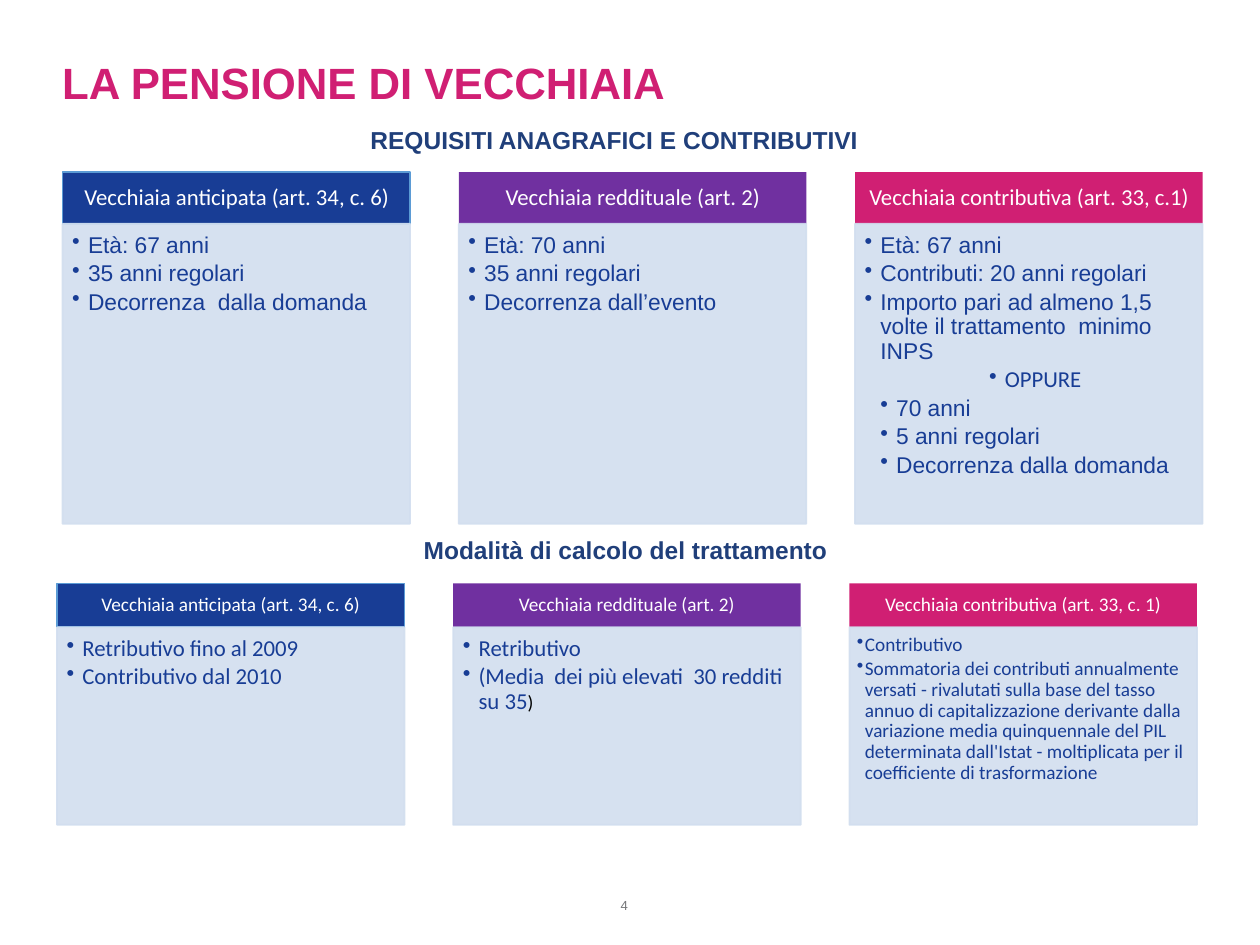
from lxml import etree
from pptx import Presentation
from pptx.dml.color import RGBColor
from pptx.enum.shapes import MSO_SHAPE
from pptx.enum.text import MSO_ANCHOR, PP_ALIGN
from pptx.oxml.ns import qn
from pptx.util import Pt

RECTANGLE = MSO_SHAPE.RECTANGLE
TOP, MIDDLE = MSO_ANCHOR.TOP, MSO_ANCHOR.MIDDLE
LEFT, CENTER = PP_ALIGN.LEFT, PP_ALIGN.CENTER

THEME = {
    "sans": "Arial", "body": "Calibri",
    "title": "D01F73", "subtitle": "203F7A", "text": "183D95", "white": "FFFFFF",
    "black": "000000", "number": "76777A", "panel": "D2DEEF", "outline": "5B9BD5",
    "columns": ("183D95", "7030A0", "D01F73"),
    "title_size": 25, "subtitle_size": 14, "large": 13, "small": 11, "number_size": 7.5,
}
PANEL_ALPHA = 90
COLUMN_WIDTH, COLUMN_PITCH = 198.6, 226.4
LABEL_INSETS = (0, 0, 7.2, 3.6)

# Label: text, (left, top, width, height), font size, colour, bold, alignment, anchor
LABELS = [
    ("LA PENSIONE DI VECCHIAIA", (35.5, 31.7, 648.7, 59),
     THEME["title_size"], THEME["title"], True, LEFT, TOP),
    ("REQUISITI ANAGRAFICI E CONTRIBUTIVI", (190.1, 71.3, 329, 26.6),
     THEME["subtitle_size"], THEME["subtitle"], True, CENTER, TOP),
    ("Modalità di calcolo del trattamento", (211, 306, 300.2, 24.5),
     THEME["subtitle_size"], THEME["subtitle"], True, CENTER, TOP),
    ("4", (321.8, 504.7, 77, 28.8),
     THEME["number_size"], THEME["number"], False, CENTER, MIDDLE),
]

# Column: heading, font size, bullets. A bullet is (level, text).
GROUPS = [
    {
        "left": 35.8, "top": 98.4, "heading_height": 29.5, "panel_height": 171.4,
        "heading_size": THEME["large"], "font": THEME["sans"],
        "columns": [
            ("Vecchiaia anticipata (art. 34, c. 6)", THEME["large"], [
                (1, "Età: 67 anni"), (1, "35 anni regolari"),
                (1, "Decorrenza  dalla domanda")]),
            ("Vecchiaia reddituale (art. 2)", THEME["large"], [
                (1, "Età: 70 anni"), (1, "35 anni regolari"),
                (1, "Decorrenza dall’evento")]),
            ("Vecchiaia contributiva (art. 33, c.1)", THEME["large"], [
                (1, "Età: 67 anni"), (1, "Contributi: 20 anni regolari"),
                (1, "Importo pari ad almeno 1,5 volte il trattamento  minimo INPS"),
                (2, "OPPURE"), (2, "70 anni"), (2, "5 anni regolari"),
                (2, "Decorrenza dalla domanda")]),
        ],
    },
    {
        "left": 32.6, "top": 333.4, "heading_height": 25, "panel_height": 113,
        "heading_size": THEME["small"], "font": THEME["body"],
        "columns": [
            ("Vecchiaia anticipata (art. 34, c. 6)", THEME["large"], [
                (1, "Retributivo fino al 2009"), (1, "Contributivo dal 2010")]),
            ("Vecchiaia reddituale (art. 2)", THEME["large"], [
                (1, "Retributivo"), (1, "(Media  dei più elevati  30 redditi su 35")]),
            ("Vecchiaia contributiva (art. 33, c. 1)", THEME["small"], [
                (1, "Contributivo"),
                (1, "Sommatoria dei contributi annualmente versati - rivalutati sulla base "
                    "del tasso annuo di capitalizzazione derivante dalla variazione media "
                    "quinquennale del PIL determinata dall'Istat - moltiplicata per il "
                    "coefficiente di trasformazione")]),
        ],
    },
]
CENTERED_BULLET = "OPPURE"
CLOSING_BRACKET_AFTER = "(Media  dei più elevati  30 redditi su 35"


def set_font(run, name, size, color, bold=False):
    run.font.name, run.font.size, run.font.bold = name, Pt(size), bold
    run.font.color.rgb = RGBColor.from_string(color)


def set_frame(text_frame, insets, anchor):
    text_frame.word_wrap = True
    text_frame.vertical_anchor = anchor
    (text_frame.margin_left, text_frame.margin_top,
     text_frame.margin_right, text_frame.margin_bottom) = map(Pt, insets)


def set_alpha(color_format_parent):
    """Make the solid colour inside a fill or line element slightly transparent."""
    for color in color_format_parent.iter(qn("a:srgbClr")):
        etree.SubElement(color, qn("a:alpha")).set("val", str(PANEL_ALPHA * 1000))


def add_rectangle(slide, box, fill, line):
    shape = slide.shapes.add_shape(RECTANGLE, *map(Pt, box))
    shape.shadow.inherit = False
    shape.fill.solid()
    shape.fill.fore_color.rgb = RGBColor.from_string(fill)
    if line:
        shape.line.color.rgb = RGBColor.from_string(line)
        shape.line.width = Pt(1)
    else:
        shape.line.fill.background()
    return shape


def set_bullet(paragraph, level, indent):
    paragraph.level = level
    properties = paragraph._p.get_or_add_pPr()
    properties.set("marL", str(Pt(indent * level)))
    properties.set("indent", str(-Pt(indent)))
    etree.SubElement(properties, qn("a:buChar")).set("char", "•")


def add_label(slide, text, box, size, color, bold, alignment, anchor):
    text_frame = slide.shapes.add_textbox(*map(Pt, box)).text_frame
    set_frame(text_frame, LABEL_INSETS, anchor)
    text_frame.text = text
    paragraph = text_frame.paragraphs[0]
    paragraph.alignment = alignment
    if size == THEME["title_size"]:
        paragraph.line_spacing = Pt(30)
    set_font(paragraph.runs[0], THEME["sans"], size, color, bold)


def add_heading(slide, box, text, size, fill, line):
    text_frame = add_rectangle(slide, box, fill, line).text_frame
    set_frame(text_frame, (6.5, 3.7, 6.5, 3.7), MIDDLE)
    text_frame.text = text
    paragraph = text_frame.paragraphs[0]
    paragraph.alignment, paragraph.line_spacing = CENTER, 0.9
    set_font(paragraph.runs[0], THEME["body"], size, THEME["white"])


def add_panel(slide, box, bullets, size, font):
    shape = add_rectangle(slide, box, THEME["panel"], THEME["panel"])
    set_alpha(shape._element.spPr)
    text_frame = shape.text_frame
    is_small = size == THEME["small"]
    set_frame(text_frame, (4.3, 4.3, 6.5, 7) if is_small else (5.5, 5.5, 7.3, 8.2), TOP)
    text_frame.text = "\n".join(text for _, text in bullets)
    for paragraph, (level, text) in zip(text_frame.paragraphs, bullets):
        is_centered = text == CENTERED_BULLET
        paragraph.alignment = CENTER if is_centered else LEFT
        paragraph.line_spacing = 0.9
        paragraph.space_after = Pt(round(size * 0.17, 1))
        set_bullet(paragraph, level, 4.5 if is_small else 9)
        run_font = THEME["body"] if is_centered else font
        set_font(paragraph.runs[0], run_font, size, THEME["text"])
        if text == CLOSING_BRACKET_AFTER:
            bracket = paragraph.add_run()
            bracket.text = ")"
            set_font(bracket, font, THEME["small"], THEME["black"])


def add_group(slide, group):
    top, heading_height = group["top"], group["heading_height"]
    for index, (heading, size, bullets) in enumerate(group["columns"]):
        left = group["left"] + index * COLUMN_PITCH
        add_heading(slide, (left, top, COLUMN_WIDTH, heading_height), heading,
                    group["heading_size"], THEME["columns"][index],
                    THEME["outline"] if index == 0 else None)
        add_panel(slide, (left, top + heading_height, COLUMN_WIDTH, group["panel_height"]),
                  bullets, size, group["font"])


def main():
    presentation = Presentation()
    presentation.slide_width, presentation.slide_height = Pt(720), Pt(540)
    slide = presentation.slides.add_slide(presentation.slide_layouts[6])
    for label in LABELS:
        add_label(slide, *label)
    for group in GROUPS:
        add_group(slide, group)
    presentation.save("out.pptx")


if __name__ == "__main__":
    main()
